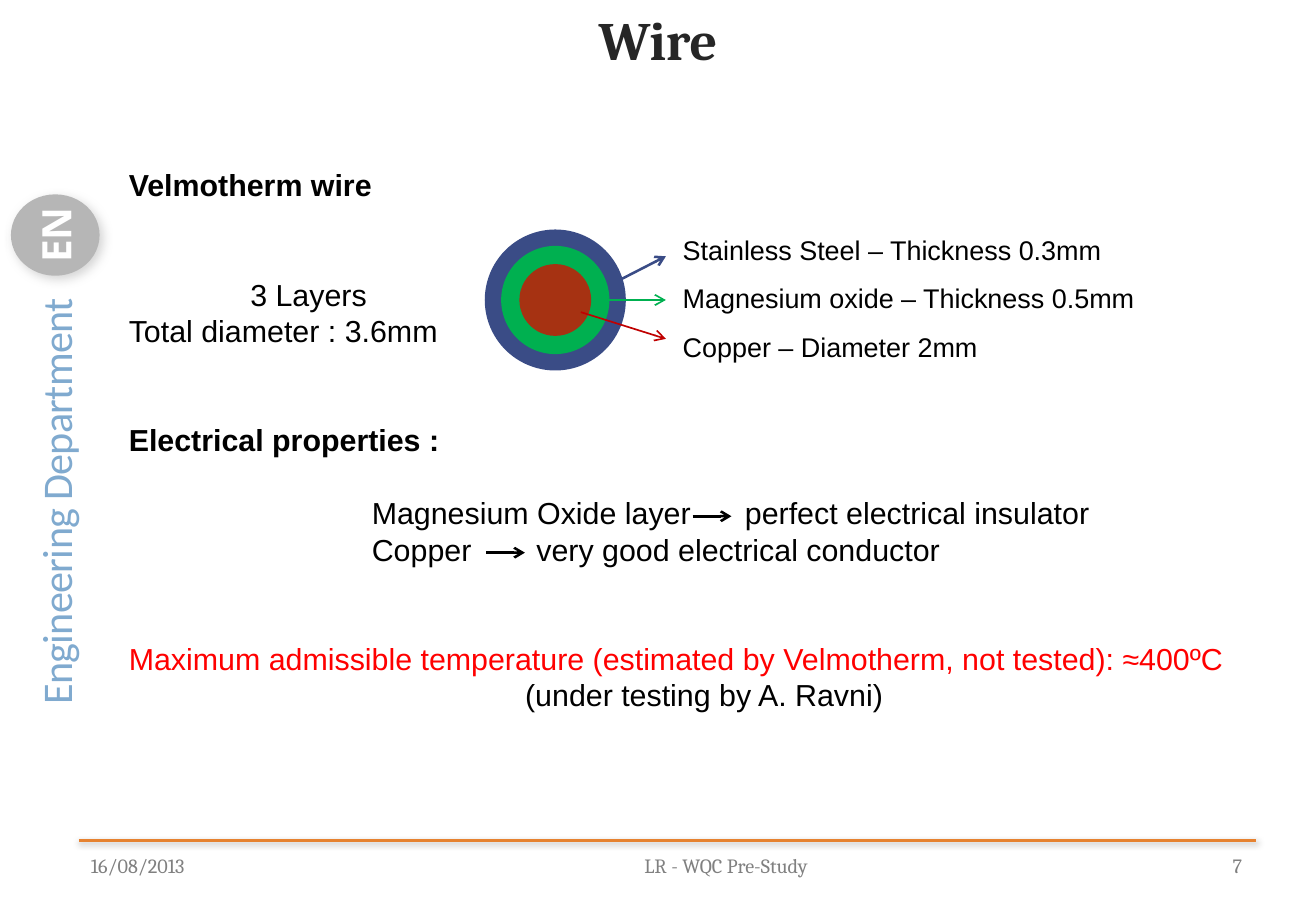
from lxml import etree
from pptx import Presentation
from pptx.dml.color import RGBColor
from pptx.enum import shapes, text
from pptx.oxml import ns
from pptx.util import Inches, Pt

WHITE = RGBColor(0xFF, 0xFF, 0xFF)
BLACK = RGBColor(0, 0, 0)
RED = RGBColor(0xFF, 0, 0)
TITLE_GREY = RGBColor(0x26, 0x26, 0x26)
FOOTER_GREY = RGBColor(0x80, 0x80, 0x80)
BADGE_GREY = RGBColor(0x6E, 0x6E, 0x6E)
BADGE_SHADOW = RGBColor(0xA6, 0xA6, 0xA6)
DEPARTMENT_BLUE = RGBColor(0x00, 0x55, 0xA0)
RULE_ORANGE = RGBColor(0xE6, 0x82, 0x30)
STEEL = RGBColor(0x3A, 0x4C, 0x86)
OXIDE = RGBColor(0x00, 0xB0, 0x50)
COPPER = RGBColor(0xA6, 0x32, 0x12)
COPPER_ARROW = RGBColor(0xC0, 0, 0)

LINE_PITCH = 21.6
PP = text.PP_ALIGN


def add_run(p, words, size, font, color, bold=False, spacing=0):
    r = p.add_run()
    r.text = words
    r.font.size = Pt(size)
    r.font.name = font
    r.font.bold = bold
    r.font.color.rgb = color
    if spacing:
        r.font._element.set("spc", str(round(spacing * 100)))


def add_label(parent, x, y, w, h, words, size, font, color,
              align=PP.LEFT, anchor=text.MSO_ANCHOR.TOP, spacing=0):
    sp = parent.add_textbox(Inches(x), Inches(y), Inches(w), Inches(h))
    tf = sp.text_frame
    tf.word_wrap = True
    tf.vertical_anchor = anchor
    tf.paragraphs[0].alignment = align
    add_run(tf.paragraphs[0], words, size, font, color, spacing=spacing)
    return sp


def clear_margins(tf):
    tf.margin_left = tf.margin_right = tf.margin_top = tf.margin_bottom = 0


def add_solid(parent, kind, x, y, w, h, color, line=None):
    sp = parent.add_shape(kind, Inches(x), Inches(y), Inches(w), Inches(h))
    sp.shadow.inherit = False
    sp.fill.solid()
    sp.fill.fore_color.rgb = color
    if line:
        sp.line.color.rgb = color
        sp.line.width = Pt(line)
    else:
        sp.line.fill.background()
    return sp


def add_line(parent, x1, y1, x2, y2, color, width, arrow=True):
    cn = parent.add_connector(shapes.MSO_CONNECTOR.STRAIGHT,
                              Inches(x1), Inches(y1), Inches(x2), Inches(y2))
    cn.line.color.rgb = color
    cn.line.width = Pt(width)
    if arrow:
        etree.SubElement(cn.line._get_or_add_ln(), ns.qn("a:tailEnd"), type="arrow")
    etree.SubElement(cn._element.spPr, ns.qn("a:effectLst"))
    return cn


def cast_shadow(sp, color, alpha, blur, dist, angle):
    effects = sp._element.spPr.find(ns.qn("a:effectLst"))
    shadow = etree.SubElement(effects, ns.qn("a:outerShdw"), blurRad=str(Pt(blur)),
                              dist=str(Pt(dist)), dir=str(angle * 60000), rotWithShape="0")
    clr = etree.SubElement(shadow, ns.qn("a:srgbClr"), val=str(color))
    etree.SubElement(clr, ns.qn("a:alpha"), val=str(alpha * 1000))


def add_sidebar(s, x, y, w, h):
    middle = x + w / 2 - 0.04
    length, thick = 3.42, 0.42
    sp = add_label(s.shapes, middle - length / 2, y + 2.62, length, thick,
                   "Engineering Department", 25, "Calibri", DEPARTMENT_BLUE,
                   anchor=text.MSO_ANCHOR.MIDDLE, spacing=-0.4)
    sp.rotation = 270
    clear_margins(sp.text_frame)

    badge = add_solid(s.shapes, shapes.MSO_SHAPE.OVAL,
                      x + 0.06, y + 0.31, 0.67, 0.73, BADGE_GREY)
    badge.rotation = 270
    cast_shadow(badge, BADGE_SHADOW, 92, 6.2, 3, 45)
    tf = badge.text_frame
    tf.word_wrap = False
    tf.vertical_anchor = text.MSO_ANCHOR.MIDDLE
    clear_margins(tf)
    tf.paragraphs[0].alignment = PP.CENTER
    add_run(tf.paragraphs[0], "EN", 24, "Noto Sans", WHITE, True)

    veil = add_solid(s.shapes, shapes.MSO_SHAPE.RECTANGLE, x, y, w, h, WHITE)
    clr = veil._element.spPr.find(ns.qn("a:solidFill"))[0]
    etree.SubElement(clr, ns.qn("a:alpha"), val="50000")


def add_footer(s, x, y, w):
    rule = add_line(s.shapes, x, y, x + w, y, RULE_ORANGE, 2, arrow=False)
    cast_shadow(rule, BLACK, 37, 4, 1, 90)
    for dx, width, words, align in (
            (0, 2.53, "16/08/2013", PP.LEFT),
            (3.13, 4.39, "LR - WQC Pre-Study", PP.CENTER),
            (w - 1.55, 1.53, "7", PP.RIGHT)):
        add_label(s.shapes, x + dx, y + 0.09, width, 0.23, words, 12, "Cambria",
                  FOOTER_GREY, align, text.MSO_ANCHOR.MIDDLE)


def place(sp, x, y, w, h):
    sp.left, sp.top, sp.width, sp.height = Inches(x), Inches(y), Inches(w), Inches(h)
    tf = sp.text_frame
    tf.word_wrap = True
    tf.auto_size = text.MSO_AUTO_SIZE.NONE
    tf.vertical_anchor = text.MSO_ANCHOR.TOP
    return tf


def fill_title(s, x, y, w, h):
    p = place(s.shapes.title, x, y, w, h).paragraphs[0]
    p.alignment = PP.CENTER
    add_run(p, "Wire", 32, "Cambria", TITLE_GREY, True)


def fill_body(s, x, y, w, h):
    tf = place(s.placeholders[1], x, y, w, h)
    lines = (
        (("Velmotherm wire",), 0, 0, True, BLACK, PP.LEFT),
        (("3 Layers",), 2, 1, False, BLACK, PP.LEFT),
        (("Total diameter : 3.6mm",), 0, 0, False, BLACK, PP.LEFT),
        (("Electrical properties :",), 2, 0, True, BLACK, PP.LEFT),
        (("Magnesium Oxide layer", 27, "perfect electrical insulator"),
         1, 2, False, BLACK, PP.LEFT),
        (("Copper", 33.5, "very good electrical conductor"),
         0, 2, False, BLACK, PP.LEFT),
        (("Maximum admissible temperature (estimated by Velmotherm, not tested): ≈400ºC",),
         2, 0, False, RED, PP.LEFT),
        (("(under testing by A. Ravni)",), 0, 0, False, BLACK, PP.CENTER),
    )
    for i, (parts, gap, indent, bold, color, align) in enumerate(lines):
        p = tf.paragraphs[0] if i == 0 else tf.add_paragraph()
        p.alignment = align
        p.line_spacing = Pt(LINE_PITCH)
        p.space_before = Pt(gap * LINE_PITCH)
        pPr = p._p.get_or_add_pPr()
        pPr.set("marL", str(Inches(indent)))
        pPr.set("indent", "0")
        etree.SubElement(pPr, ns.qn("a:buNone"))
        for part in parts:
            if isinstance(part, str):
                add_run(p, part, 18, "Arial", color, bold)
            else:
                add_run(p, " ", 18, "Arial", color, spacing=part)
    for dx, dy in ((4.74, 2.93), (3.04, 3.23)):
        add_line(s.shapes, x + dx, y + dy, x + dx + 0.32, y + dy, BLACK, 1.5)


def add_wire_section(s, x, y, size):
    group = s.shapes.add_group_shape().shapes
    center = size / 2
    for diameter, color in ((size, STEEL), (0.87, OXIDE), (0.57, COPPER)):
        offset = center - diameter / 2
        add_solid(group, shapes.MSO_SHAPE.OVAL, x + offset, y + offset,
                  diameter, diameter, color, 1.5)
    layers = (
        ("Stainless Steel – Thickness 0.3mm", (1.09, 0.41), 0.21, STEEL, 1.5),
        ("Magnesium oxide – Thickness 0.5mm", (1.01, 0.57), 0.57, OXIDE, 1),
        ("Copper – Diameter 2mm", (0.78, 0.67), 0.89, COPPER_ARROW, 1),
    )
    for i, (words, (dx, dy), tip, color, width) in enumerate(layers):
        add_line(group, x + dx, y + dy, x + 1.48, y + tip, color, width)
        add_label(group, x + 1.52, y - 0.03 + 0.4 * i, 4.31, 0.37,
                  words, 16, "Arial", BLACK)


def main():
    prs = Presentation()
    prs.slide_width, prs.slide_height = Inches(10.83), Inches(7.5)
    s = prs.slides.add_slide(prs.slide_layouts[1])
    add_sidebar(s, 0.06, 1.26, 0.87, 5.56)
    add_footer(s, 0.65, 6.92, 9.69)
    fill_title(s, 0, 0, 10.83, 0.79)
    fill_body(s, 0.96, 1.32, 9.67, 4.65)
    add_wire_section(s, 4, 1.9, 1.14)
    prs.save("out.pptx")


if __name__ == "__main__":
    main()
